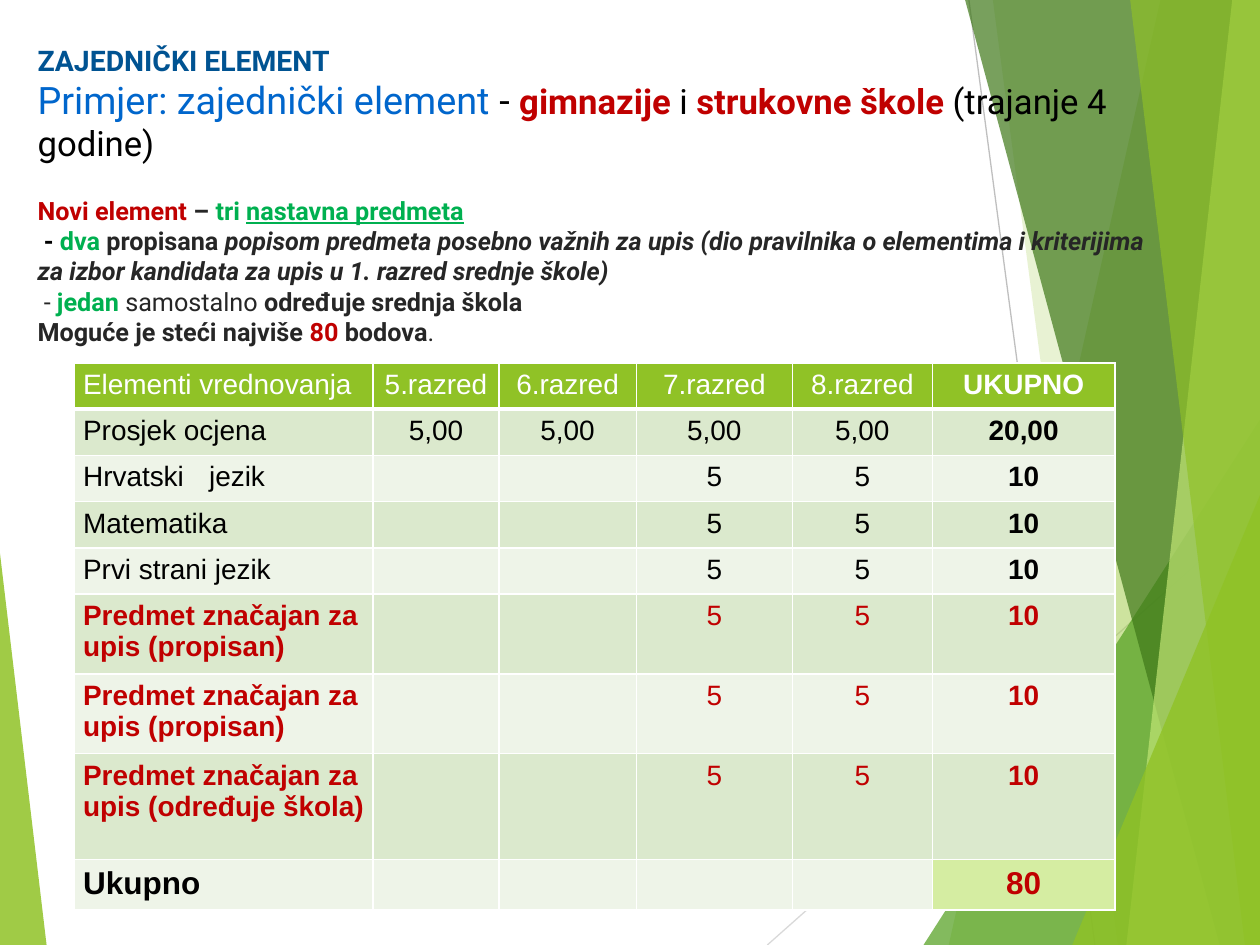
import pptx
import pptx.dml.color
import pptx.enum.dml
import pptx.enum.shapes
import pptx.enum.text
import pptx.oxml.ns
import pptx.util
from lxml import etree

RGB = pptx.dml.color.RGBColor
SHAPE = pptx.enum.shapes.MSO_SHAPE
ALIGN = pptx.enum.text.PP_ALIGN
qn = pptx.oxml.ns.qn

COLUMNS, ROWS = 100, 75
CELL = pptx.util.Inches(0.1)  # one square of the slide grid

WHITE = RGB(0xFF, 0xFF, 0xFF)
BLACK = RGB(0x00, 0x00, 0x00)
INK = RGB(0x26, 0x26, 0x26)
NAVY = RGB(0x00, 0x53, 0x92)
BLUE = RGB(0x00, 0x66, 0xCC)
RED = RGB(0xC0, 0x00, 0x00)
EMERALD = RGB(0x00, 0xB0, 0x50)
LIME = RGB(0x90, 0xC2, 0x26)
LEAF = RGB(0x54, 0xA0, 0x21)
FOREST = RGB(0x3F, 0x78, 0x19)
PALE_LIME = RGB(0xC0, 0xE4, 0x74)
BAND_DARK = RGB(0xDB, 0xE9, 0xCD)
BAND_LIGHT = RGB(0xEE, 0xF4, 0xE8)
TOTAL_FILL = RGB(0xD5, 0xED, 0xA2)
GREY = RGB(0xBF, 0xBF, 0xBF)
LIGHT_GREY = RGB(0xD9, 0xD9, 0xD9)


def grid(*counts):
    return [round(count * CELL) for count in counts]


def add_text(paragraph, text, size=16, color=BLACK, font="Arial",
             bold=False, italic=False, underline=False):
    run = paragraph.add_run()
    run.text = text
    run.font.name = font
    run.font.size = pptx.util.Pt(size)
    run.font.color.rgb = color
    run.font.bold = bold
    run.font.italic = italic
    run.font.underline = underline


def paint(shape, color, opacity):
    """Fill a facet with a see-through colour, without outline or shadow."""
    shape.shadow.inherit = False
    shape.line.fill.background()
    shape.fill.solid()
    shape.fill.fore_color.rgb = color
    tint = shape.fill._xPr.find(qn("a:solidFill"))[0]
    etree.SubElement(tint, qn("a:alpha"), val=str(opacity * 1000))


def add_thread(slide, start, end, color):
    thread = slide.shapes.add_connector(
        pptx.enum.shapes.MSO_CONNECTOR.STRAIGHT, *grid(*start, *end))
    thread.line.color.rgb = color
    thread.line.width = pptx.util.Pt(0.75)
    etree.SubElement(thread._element.spPr, qn("a:effectLst"))


def add_band(slide, box, top_left, bottom_left, bottom_right, color, opacity):
    """Four-sided facet whose top right corner is that of the box."""
    left, top, width, height = box
    corners = [(top_left, 0), (width, 0), (bottom_right, height), (bottom_left, height)]
    points = [grid(left + x, top + y) for x, y in corners]
    builder = slide.shapes.build_freeform(*points[0])
    builder.add_line_segments(points[1:], close=True)
    paint(builder.convert_to_shape(), color, opacity)


def add_triangle(slide, box, apex, color, opacity):
    triangle = slide.shapes.add_shape(SHAPE.ISOSCELES_TRIANGLE, *grid(*box))
    triangle.adjustments[0] = apex
    paint(triangle, color, opacity)


def add_facets(slide, box):
    left, top, width, height = box
    right, bottom = left + width, top + height

    def corner_triangle(across, up, color, opacity):
        add_triangle(slide, (right - across, bottom - up, across, up), 1, color, opacity)

    add_thread(slide, (left + 16.9, top), (left + 26.9, bottom), GREY)
    add_thread(slide, (right, top + 40.3), (left + 0.9, bottom), LIGHT_GREY)
    add_band(slide, box, 32.1, 15.3, width, LIME, 30)
    add_band(slide, box, 18.8, 28.7, width, LIME, 20)
    corner_triangle(26.7, 41.7, LEAF, 72)
    add_band(slide, box, 16.6, 36.8, width, FOREST, 70)
    add_band(slide, box, 37.8, 29.4, width, PALE_LIME, 70)
    add_band(slide, box, 29.7, 38.8, width, LIME, 65)
    corner_triangle(14.9, 35.7, LIME, 80)


def add_heading(slide, box):
    title, subtitle, body = 16.2, 21.6, 14.4
    accent = 19.8
    lines = [
        (title, 0, [("ZAJEDNIČKI ELEMENT", NAVY, "b")]),
        (accent, 0, [("Primjer: zajednički element ", BLUE, "", subtitle),
                     ("- ", BLACK, "", subtitle),
                     ("gimnazije", RED, "b"), (" i ", BLACK, ""),
                     ("strukovne škole ", RED, "b"),
                     ("(trajanje 4 godine)", BLACK, "")]),
        (body, 18, [("Novi element ", RED, "b"), ("– ", INK, "b"),
                    ("tri ", EMERALD, "b"), ("nastavna predmeta", EMERALD, "bu")]),
        (body, 0, [(" - ", BLACK, "b"), ("dva ", EMERALD, "b"), ("propisana ", INK, "b"),
                   ("popisom predmeta posebno važnih za upis (dio pravilnika o "
                    "elementima i kriterijima za izbor kandidata za upis u 1. "
                    "razred srednje škole)", INK, "bi")]),
        (body, 0, [(" - ", INK, ""), ("jedan", EMERALD, "b"),
                   (" samostalno ", INK, ""), ("određuje srednja škola", INK, "b")]),
        (body, 0, [("Moguće je steći najviše ", INK, "b"), ("80", RED, "b"),
                   (" bodova", INK, "b"), (".", INK, "")]),
    ]
    frame = slide.shapes.add_textbox(*grid(*box)).text_frame
    frame.word_wrap = True
    frame.vertical_anchor = pptx.enum.text.MSO_ANCHOR.TOP
    for index, (size, gap, pieces) in enumerate(lines):
        paragraph = frame.add_paragraph() if index else frame.paragraphs[0]
        paragraph.space_before = pptx.util.Pt(gap)
        for text, color, style, *own_size in pieces:
            add_text(paragraph, text, size=own_size[0] if own_size else size,
                     color=color, font="Roboto", bold="b" in style,
                     italic="i" in style, underline="u" in style)


def add_borders(cell, bottom):
    properties = cell._tc.get_or_add_tcPr()
    widths = {"a:lnL": 1, "a:lnR": 1, "a:lnT": 1, "a:lnB": bottom}
    for position, (side, width) in enumerate(widths.items()):
        line = etree.Element(qn(side), w=str(pptx.util.Pt(width)))
        fill = etree.SubElement(line, qn("a:solidFill"))
        etree.SubElement(fill, qn("a:srgbClr"), val=str(WHITE))
        properties.insert(position, line)


def add_scores(slide, box):
    def subject(name):
        return [name, "", "", "5", "5", "10"]

    prescribed = subject("Predmet značajan za upis (propisan)")
    scores = [
        ["Elementi vrednovanja", *(f"{year}.razred" for year in range(5, 9)), "UKUPNO"],
        ["Prosjek ocjena", *["5,00"] * 4, "20,00"],
        *map(subject, ("Hrvatski\tjezik", "Matematika", "Prvi strani jezik")),
        prescribed,
        prescribed,
        subject("Predmet značajan za upis (određuje škola)"),
        ["Ukupno", *[""] * 4, "80"],
    ]
    widths = [23.7, 10, 10.9, 12.4, 11.1, 14.5]
    heights = [3.5, 3.5, 3.6, 3.6, 3.6, 6, 6, 8.4, 3.9]
    last_row, last_column = len(heights) - 1, len(widths) - 1
    red_rows = range(5, last_row)

    table = slide.shapes.add_table(len(heights), len(widths), *grid(*box)).table
    for column, width in zip(table.columns, grid(*widths)):
        column.width = width
    for r, (row, height) in enumerate(zip(table.rows, grid(*heights))):
        row.height = height
        for c, cell in enumerate(row.cells):
            total = r == last_row and c == last_column
            cell.margin_left = cell.margin_right = pptx.util.Inches(0.07)
            cell.margin_top = cell.margin_bottom = pptx.util.Inches(0.05)
            cell.fill.solid()
            cell.fill.fore_color.rgb = (LIME if r == 0 else TOTAL_FILL if total
                                        else BAND_DARK if r % 2 else BAND_LIGHT)
            add_borders(cell, bottom=3 if r == 0 else 1)
            paragraph = cell.text_frame.paragraphs[0]
            paragraph.alignment = ALIGN.CENTER if c else ALIGN.LEFT
            if scores[r][c]:
                add_text(paragraph, scores[r][c], size=18 if r == last_row else 16,
                         color=(WHITE if r == 0 else RED if r in red_rows or total
                                else BLACK),
                         bold=c == last_column or (c == 0 and r >= red_rows.start))
            else:
                etree.SubElement(paragraph._p, qn("a:endParaRPr"), sz="1600")


def main():
    deck = pptx.Presentation()
    deck.slide_width, deck.slide_height = grid(COLUMNS, ROWS)
    slide = deck.slides.add_slide(deck.slide_layouts[6])
    add_facets(slide, (60, 0, 40, ROWS))
    add_triangle(slide, (0, 43.9, 3.7, 31.1), 0, LIME, 85)
    add_heading(slide, (2, 2.9, 90.3, 9.4))
    add_scores(slide, (5.9, 28.8, 82.6, 42.1))
    deck.save("out.pptx")


if __name__ == "__main__":
    main()
